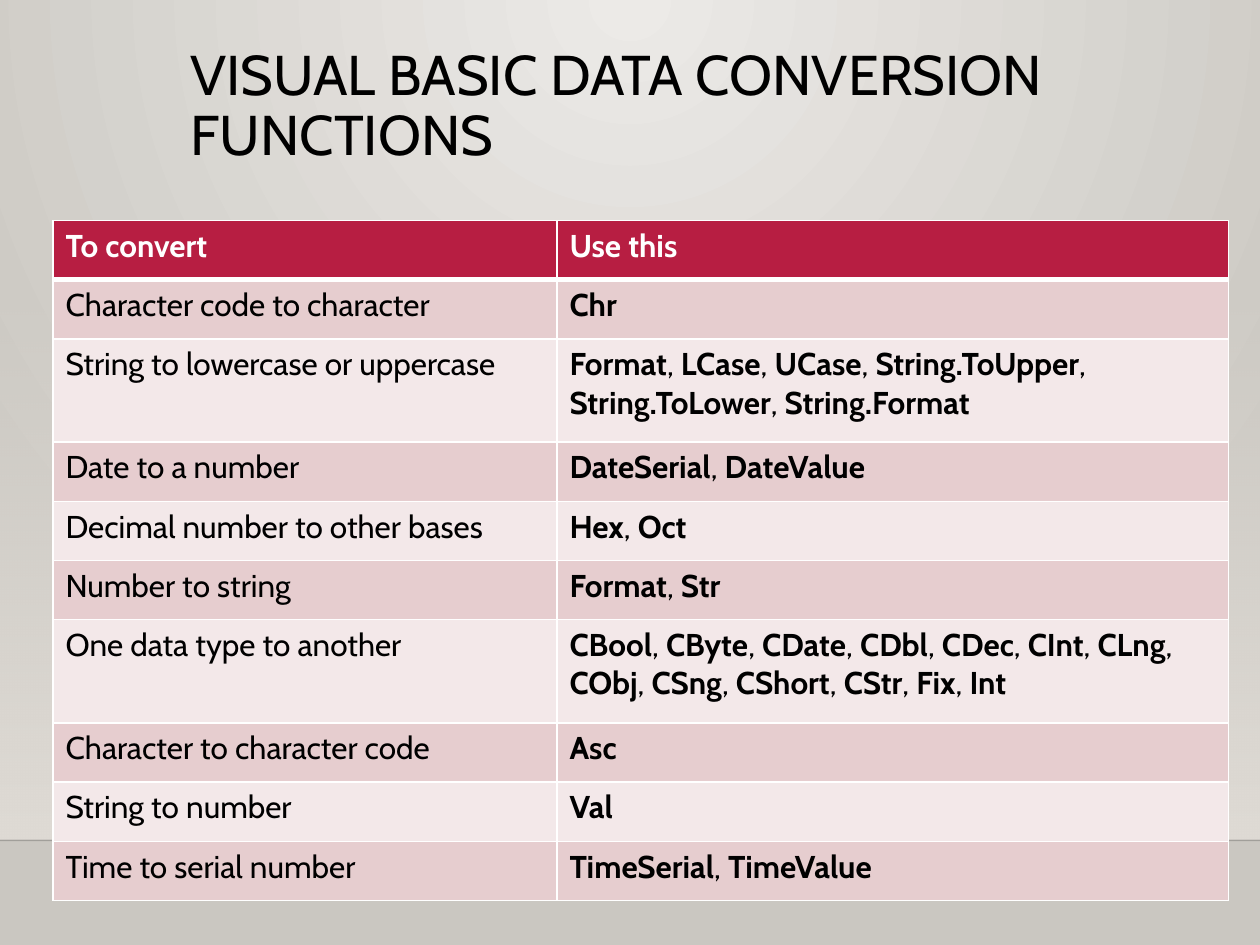
from lxml import etree
from pptx import Presentation
from pptx.dml.color import RGBColor
from pptx.enum.shapes import MSO_CONNECTOR, MSO_SHAPE
from pptx.enum.text import MSO_ANCHOR, MSO_AUTO_SIZE, PP_ALIGN
from pptx.oxml.ns import qn
from pptx.util import Inches, Pt

RECT, STRAIGHT = MSO_SHAPE.RECTANGLE, MSO_CONNECTOR.STRAIGHT
TOP, LEFT, NO_FIT = MSO_ANCHOR.TOP, PP_ALIGN.LEFT, MSO_AUTO_SIZE.NONE
FONT = "Cabin"
BLACK = RGBColor(0x00, 0x00, 0x00)
WHITE = RGBColor(0xFF, 0xFF, 0xFF)
RED = RGBColor(0xB7, 0x1E, 0x42)
PINK = RGBColor(0xE6, 0xCD, 0xCF)
PALE_PINK = RGBColor(0xF3, 0xE8, 0xE9)
BG_LIGHT = RGBColor(0xEC, 0xEA, 0xE7)
BG_DARK = RGBColor(0xCA, 0xC7, 0xC1)
WALL = RGBColor(0xDF, 0xDB, 0xD5)

ROWS = [
    ("To convert", "Use this"),
    ("Character code to character", "Chr"),
    ("String to lowercase or uppercase",
     "Format, LCase, UCase, String.ToUpper, String.ToLower, String.Format"),
    ("Date to a number", "DateSerial, DateValue"),
    ("Decimal number to other bases", "Hex, Oct"),
    ("Number to string", "Format, Str"),
    ("One data type to another",
     "CBool, CByte, CDate, CDbl, CDec, CInt, CLng, CObj, CSng, CShort, CStr, Fix, Int"),
    ("Character to character code", "Asc"),
    ("String to number", "Val"),
    ("Time to serial number", "TimeSerial, TimeValue"),
]
TALL_ROWS = (2, 6)


def set_alpha(element, percent):
    """Give the first RGB colour inside element an opacity."""
    color = next(element.iter(qn("a:srgbClr")))
    etree.SubElement(color, qn("a:alpha"), val=str(percent * 1000))


def set_borders(cell, bottom):
    """Draw white cell borders, 1 pt except for the given bottom width."""
    tcPr = cell._tc.get_or_add_tcPr()
    for i, (side, width) in enumerate((("L", 1), ("R", 1), ("T", 1), ("B", bottom))):
        ln = etree.Element(qn(f"a:ln{side}"), w=str(Pt(width)))
        fill = etree.SubElement(ln, qn("a:solidFill"))
        etree.SubElement(fill, qn("a:srgbClr"), val=str(WHITE))
        tcPr.insert(i, ln)


prs = Presentation()
prs.slide_width, prs.slide_height = Inches(10), Inches(7.5)
s = prs.slides.add_slide(prs.slide_layouts[5])

# Background: circular gradient centred on the top edge
fill = s.background.fill
fill.gradient()
for stop, color in zip(fill.gradient_stops, (BG_LIGHT, BG_DARK)):
    stop.color.rgb = color
grad = next(s.element.iter(qn("a:gradFill")))
grad.remove(grad.find(qn("a:lin")))
circle = etree.SubElement(grad, qn("a:path"), path="circle")
etree.SubElement(circle, qn("a:fillToRect"), l="43000", t="0", r="43000", b="100000")

# Wall fading in towards the floor line
wall = s.shapes.add_shape(RECT, 0, Inches(2.2), Inches(10), Inches(4.46))
wall.shadow.inherit = False
wall.line.fill.background()
wall.fill.gradient()
wall.fill.gradient_angle = 270
for stop in wall.fill.gradient_stops:
    stop.color.rgb = WALL
set_alpha(wall.element.spPr, 0)

floor = s.shapes.add_connector(STRAIGHT, 0, Inches(6.67), Inches(10), Inches(6.67))
floor.line.color.rgb = BLACK
floor.line.width = Pt(1)
set_alpha(floor.line._get_or_add_ln(), 20)
etree.SubElement(floor._element.spPr, qn("a:effectLst"))

# Title
title = s.shapes.title
title.left, title.top = Inches(1.41), Inches(0.32)
title.width, title.height = Inches(7.19), Inches(1.15)
tf = title.text_frame
tf.text = "VISUAL BASIC DATA CONVERSION FUNCTIONS"
tf.word_wrap = True
tf.auto_size = NO_FIT
tf.vertical_anchor = TOP
p = tf.paragraphs[0]
p.alignment = LEFT
p.line_spacing = 0.9
p.font.name, p.font.size = FONT, Pt(32)
p.font.color.rgb = BLACK

# Conversion table
table = s.shapes.add_table(len(ROWS), 2, Inches(0.42), Inches(1.75),
                           Inches(9.33), Inches(5.42)).table
table.columns[0].width, table.columns[1].width = Inches(4), Inches(5.33)
for i, texts in enumerate(ROWS):
    header = i == 0
    table.rows[i].height = Inches(0.82 if i in TALL_ROWS else 0.47)
    for j, text in enumerate(texts):
        cell = table.cell(i, j)
        cell.fill.solid()
        cell.fill.fore_color.rgb = RED if header else PINK if i % 2 else PALE_PINK
        set_borders(cell, 3 if header else 1)
        p = cell.text_frame.paragraphs[0]
        p.font.name, p.font.size = FONT, Pt(18)
        p.font.color.rgb = WHITE if header else BLACK
        p.font.bold = header or j == 1
        for k, name in enumerate(text.split(", ")):
            if k:
                r = p.add_run()
                r.text = ", "
                r.font.bold = False
            p.add_run().text = name

prs.save("out.pptx")
